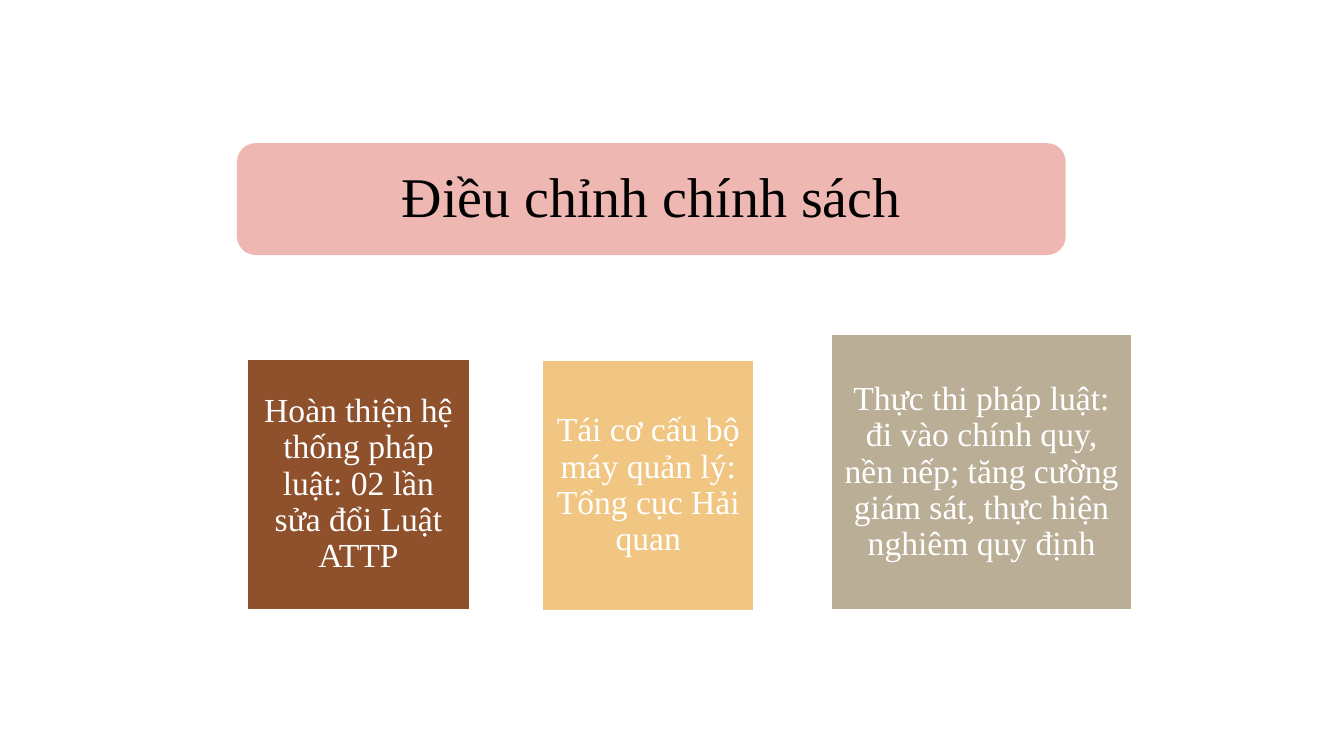
from dataclasses import dataclass

from pptx import Presentation
from pptx.dml.color import RGBColor
from pptx.enum.shapes import MSO_SHAPE as Preset
from pptx.enum.text import MSO_ANCHOR as Anchor, PP_ALIGN as Align
from pptx.util import Inches, Pt


@dataclass(frozen=True)
class Theme:
    font: str = "Times New Roman"
    title_size: int = 40
    body_size: int = 24
    black: str = "000000"
    white: str = "FFFFFF"
    pink: str = "EFB7B1"
    brown: str = "8F502C"
    amber: str = "F0C682"
    taupe: str = "BAAE97"


THEME = Theme()

TITLE_BOX = (2.35, 1.42, 8.22, 1.11)
POLICY_CARDS = [
    ((2.45, 3.56, 2.21, 2.49), THEME.brown,
     "Hoàn thiện hệ thống pháp luật: 02 lần sửa đổi Luật ATTP"),
    ((5.38, 3.57, 2.1, 2.49), THEME.amber,
     "Tái cơ cấu bộ máy quản lý: Tổng cục Hải quan"),
    ((8.24, 3.32, 2.99, 2.73), THEME.taupe,
     "Thực thi pháp luật: đi vào chính quy, nền nếp; "
     "tăng cường giám sát, thực hiện nghiêm quy định"),
]


def add_panel(slide, preset, box, fill, text, size, color, inset):
    """Add a filled shape with centred text and return it."""
    shape = slide.shapes.add_shape(preset, *map(Inches, box))
    shape.shadow.inherit = False
    shape.fill.solid()
    shape.fill.fore_color.rgb = RGBColor.from_string(fill)
    shape.line.fill.background()

    frame = shape.text_frame
    frame.word_wrap = True
    frame.vertical_anchor = Anchor.MIDDLE
    frame.margin_left = frame.margin_right = Inches(inset)
    frame.margin_top = frame.margin_bottom = Inches(inset)
    paragraph = frame.paragraphs[0]
    paragraph.alignment = Align.CENTER
    paragraph.line_spacing = 0.9
    run = paragraph.add_run()
    run.text = text
    run.font.name = THEME.font
    run.font.size = Pt(size)
    run.font.color.rgb = RGBColor.from_string(color)
    return shape


def add_title(slide, box, text):
    add_panel(slide, Preset.ROUNDED_RECTANGLE, box, THEME.pink, text,
              THEME.title_size, THEME.black, inset=0.16)


def add_policy_card(slide, box, fill, text):
    card = add_panel(slide, Preset.RECTANGLE, box, fill, text,
                     THEME.body_size, THEME.white, inset=0.1)
    card.line.color.rgb = RGBColor.from_string(THEME.white)
    card.line.width = Pt(1.25)


def main():
    presentation = Presentation()
    presentation.slide_width = Inches(13.33)
    presentation.slide_height = Inches(7.5)
    slide = presentation.slides.add_slide(presentation.slide_layouts[6])
    add_title(slide, TITLE_BOX, "Điều chỉnh chính sách")
    for box, fill, text in POLICY_CARDS:
        add_policy_card(slide, box, fill, text)
    presentation.save("out.pptx")


if __name__ == "__main__":
    main()
